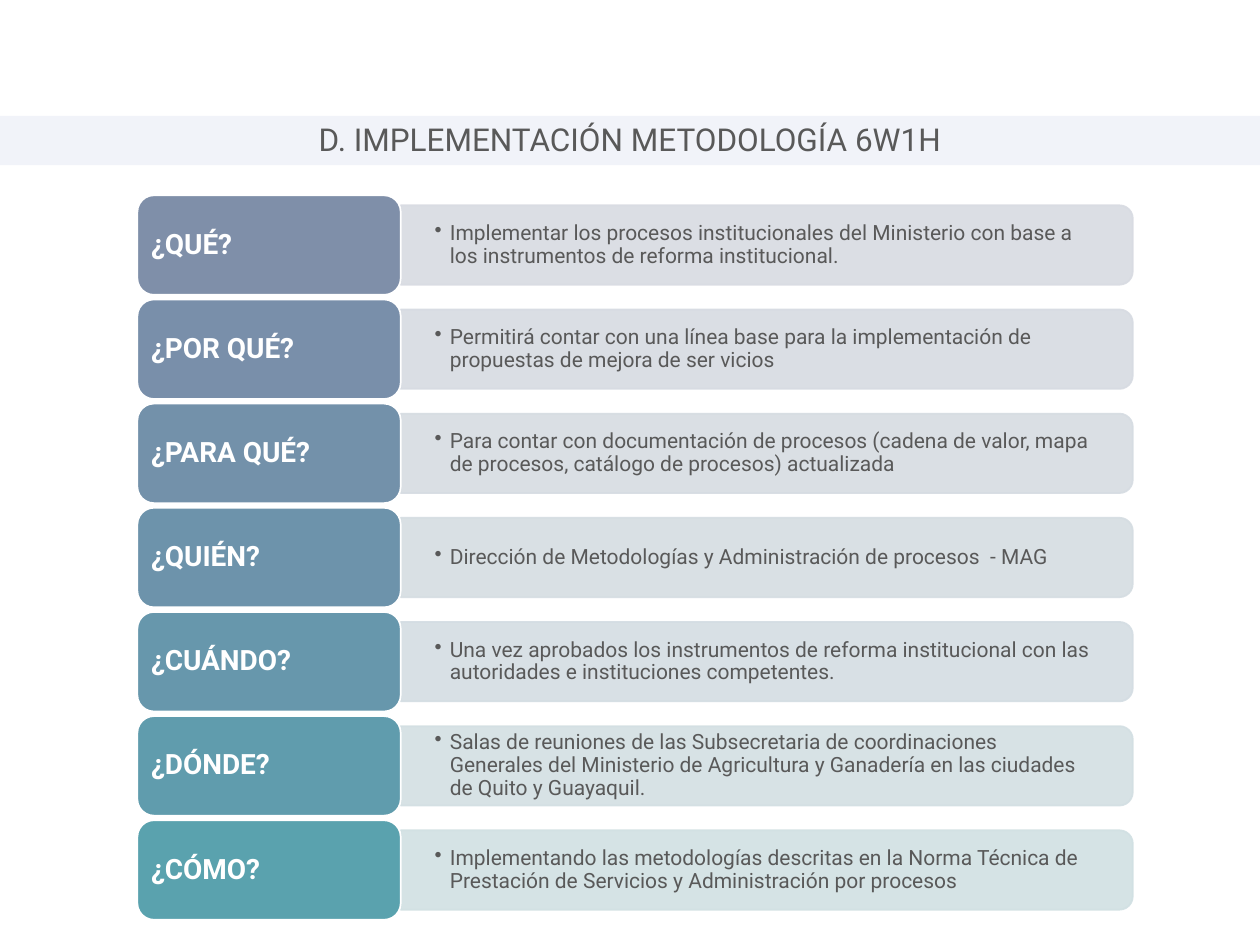
from lxml.etree import SubElement
from pptx import Presentation
from pptx.dml.color import RGBColor
from pptx.enum.shapes import MSO_SHAPE as Shape
from pptx.enum.text import MSO_ANCHOR as Anchor, PP_ALIGN as Align
from pptx.oxml.ns import qn
from pptx.util import Inches, Pt

FONT = "Roboto"
GREY = "595959"
WHITE = "FFFFFF"
LABEL_W, LABEL_H, BAR_H, TEXT_H = 2.09, 0.79, 0.63, 0.57

# question, answer, label colour, bar colour
ROWS = [
    ("¿QUÉ?", "Implementar los procesos institucionales del Ministerio con base a "
     "los instrumentos de reforma institucional.", "7F8FA9", "D8DBE2"),
    ("¿POR QUÉ?", "Permitirá contar con una línea base para la implementación de "
     "propuestas de mejora de ser vicios", "798FAA", "D7DBE2"),
    ("¿PARA QUÉ?", "Para contar con documentación de procesos (cadena de valor, mapa "
     "de procesos, catálogo de procesos) actualizada", "7391AA", "D6DCE2"),
    ("¿QUIÉN?", "Dirección de Metodologías y Administración de procesos  - MAG",
     "6D93AB", "D5DDE2"),
    ("¿CUÁNDO?", "Una vez aprobados los instrumentos de reforma institucional con las "
     "autoridades e instituciones competentes.", "6797AC", "D4DDE3"),
    ("¿DÓNDE?", "Salas de reuniones de las Subsecretaria de coordinaciones "
     "Generales del Ministerio de Agricultura y Ganadería en las ciudades "
     "de Quito y Guayaquil.", "609CAD", "D3DFE3"),
    ("¿CÓMO?", "Implementando las metodologías descritas en la Norma Técnica de "
     "Prestación de Servicios y Administración por procesos", "5AA2AE", "D1E0E3"),
]


def paint(fill, color, alpha=100):
    """Make a fill solid, with alpha in percent."""
    fill.solid()
    fill.fore_color.rgb = RGBColor.from_string(color)
    if alpha < 100:
        for node in fill._xPr.iter(qn("a:srgbClr")):
            SubElement(node, qn("a:alpha"), val=str(alpha * 1000))


def add_box(shapes, kind, x, y, w, h, color, alpha=100, line=None):
    box = shapes.add_shape(kind, Inches(x), Inches(y), Inches(w), Inches(h))
    box.shadow.inherit = False
    paint(box.fill, color, alpha)
    if line:
        box.line.width = Pt(1)
        paint(box.line.fill, line, alpha)
    else:
        box.line.fill.background()
    return box


def put_text(shape, text, size=12, color=GREY, bold=False, align=Align.LEFT,
             anchor=Anchor.MIDDLE, inset=(0.1, 0.05), bullet=False):
    frame = shape.text_frame
    frame.word_wrap = True
    frame.vertical_anchor = anchor
    frame.margin_left = frame.margin_right = Inches(inset[0])
    frame.margin_top = frame.margin_bottom = Inches(inset[1])
    para = frame.paragraphs[0]
    para.alignment = align
    para.line_spacing = 0.9
    para.space_before = Pt(0)
    run = para.add_run()
    run.text = text
    font = run.font
    font.name, font.size, font.bold = FONT, Pt(size), bold
    font.color.rgb = RGBColor.from_string(color)
    if bullet:
        props = para._p.get_or_add_pPr()
        props.set("marL", str(Inches(0.12)))
        props.set("indent", str(-Inches(0.12)))
        SubElement(props, qn("a:buChar"), char="•")


def add_title(slide, x, y, w, h):
    band = add_box(slide.shapes, Shape.RECTANGLE, x, y, w, h, "90A2CF", alpha=12)
    title = slide.shapes.title
    title.left, title.top = Inches(x), Inches(y + 0.02)
    title.width, title.height = Inches(w), Inches(h - 0.02)
    put_text(title, "D. IMPLEMENTACIÓN METODOLOGÍA 6W1H", size=18,
             align=Align.CENTER, anchor=Anchor.TOP)
    title._element.addprevious(band._element)


def add_row(shapes, x, y, w, row):
    question, answer, dark, pale = row
    left, mid = x + LABEL_W, y + LABEL_H / 2
    length = w - LABEL_W
    # The bar is drawn upright and turned, so its round end faces right.
    bar = add_box(shapes, Shape.ROUND_2_SAME_RECTANGLE,
                  left + (length - BAR_H) / 2, mid - length / 2,
                  BAR_H, length, pale, alpha=90, line=pale)
    bar.rotation = 90
    note = shapes.add_textbox(Inches(left), Inches(mid - TEXT_H / 2),
                              Inches(length - 0.03), Inches(TEXT_H))
    put_text(note, answer, inset=(0.27, 0.14), bullet=True)
    label = add_box(shapes, Shape.ROUNDED_RECTANGLE, x, y, LABEL_W, LABEL_H,
                    dark, line=WHITE)
    put_text(label, question, size=16, color=WHITE, bold=True, inset=(0.07, 0.03))


def add_rows(slide, x, y, w, h):
    """Spread the rows evenly over the height of the box."""
    group = slide.shapes.add_group_shape()
    step = (h - LABEL_H) / (len(ROWS) - 1)
    for i, row in enumerate(ROWS):
        add_row(group.shapes, x, y + i * step, w, row)


def main():
    prs = Presentation()
    prs.slide_width, prs.slide_height = Inches(10), Inches(7.5)
    slide = prs.slides.add_slide(prs.slide_layouts[5])
    add_title(slide, 0, 0.92, 10, 0.39)
    add_rows(slide, 1.09, 1.55, 7.9, 5.75)
    prs.save("out.pptx")


if __name__ == "__main__":
    main()
